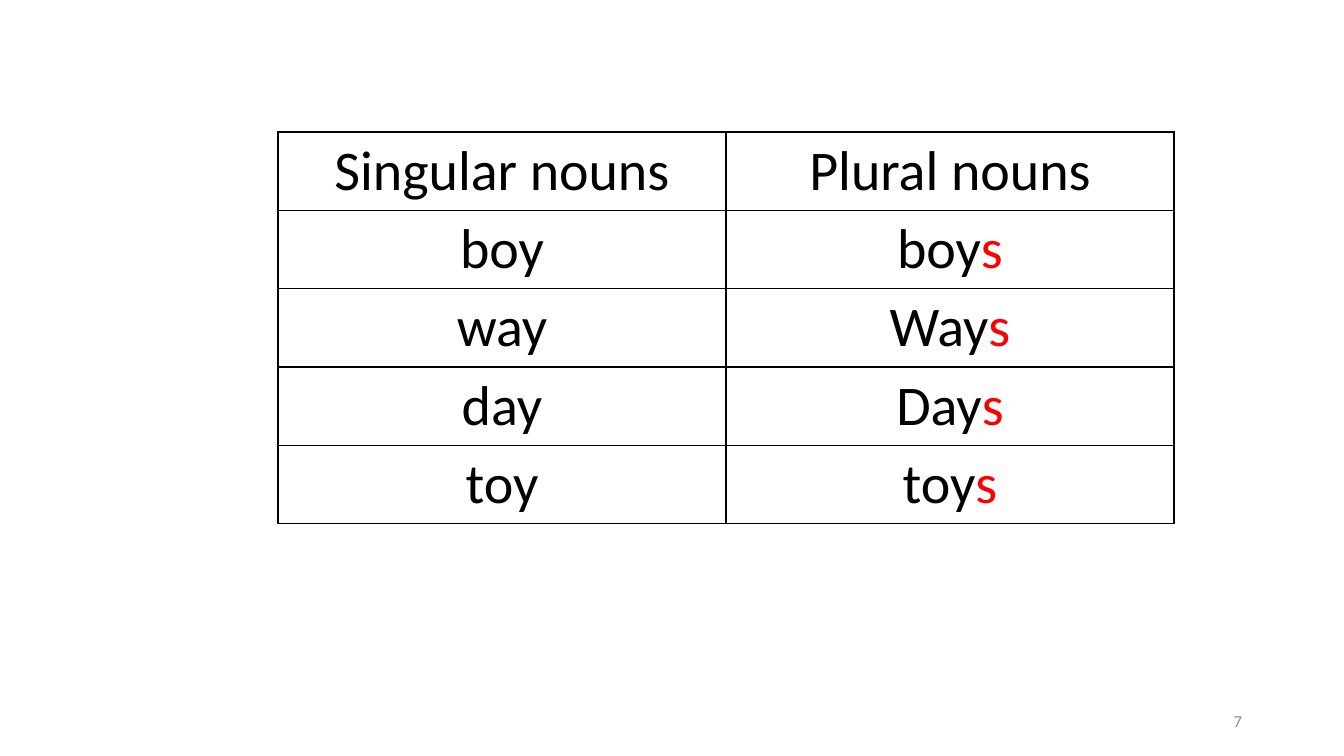
from pptx import Presentation, util as u
from pptx.dml.color import RGBColor
from pptx.enum import text
from pptx.oxml import parse_xml
from pptx.oxml.ns import nsdecls

PX = 914400 / 100.8
COLORS = {"ink": "000000", "ending": "FF0000", "number": "8C8C8C"}
FONT = "Calibri"
COL_W, ROW_H = 448, 78

# Each cell is a stem and a highlighted ending.
NOUNS = [
    [("Singular nouns", ""), ("Plural nouns", "")],
    [("boy", ""), ("boy", "s")],
    [("way", ""), ("Way", "s")],
    [("day", ""), ("Day", "s")],
    [("toy", ""), ("toy", "s")],
]


def px(n):
    return u.Emu(round(n * PX))


def add_run(p, words, size, color):
    r = p.add_run()
    r.text = words
    r.font.name = FONT
    r.font.size = u.Pt(size)
    r.font.color.rgb = RGBColor.from_string(COLORS[color])


def set_borders(cell):
    tc_pr = cell._tc.get_or_add_tcPr()
    for i, side in enumerate(("lnL", "lnR", "lnT", "lnB")):
        tc_pr.insert(i, parse_xml(
            f'<a:{side} {nsdecls("a")} w="{u.Pt(1)}"><a:solidFill>'
            f'<a:srgbClr val="{COLORS["ink"]}"/></a:solidFill></a:{side}>'))


def fill_cell(cell, stem, ending):
    cell.fill.background()
    set_borders(cell)
    p = cell.text_frame.paragraphs[0]
    p.alignment = text.PP_ALIGN.CENTER
    add_run(p, stem, 40, "ink")
    if ending:
        add_run(p, ending, 40, "ending")


def add_noun_table(s, x, y):
    n_rows, n_cols = len(NOUNS), len(NOUNS[0])
    table = s.shapes.add_table(n_rows, n_cols, px(x), px(y),
                               px(n_cols * COL_W), px(n_rows * ROW_H)).table
    table.first_row = table.horz_banding = False
    for col in table.columns:
        col.width = px(COL_W)
    for i, row in enumerate(NOUNS):
        table.rows[i].height = px(ROW_H)
        for j, (stem, ending) in enumerate(row):
            fill_cell(table.cell(i, j), stem, ending)


def add_page_number(s, number, x, y, w, h):
    tf = s.shapes.add_textbox(px(x), px(y), px(w), px(h)).text_frame
    tf.word_wrap = True
    tf.vertical_anchor = text.MSO_ANCHOR.MIDDLE
    p = tf.paragraphs[0]
    p.alignment = text.PP_ALIGN.RIGHT
    add_run(p, number, 12, "number")


def main():
    prs = Presentation()
    prs.slide_width, prs.slide_height = px(1344), px(756)
    s = prs.slides.add_slide(prs.slide_layouts[6])
    add_noun_table(s, 278, 132)
    add_page_number(s, "7", 950, 701, 302, 40)
    prs.save("out.pptx")


if __name__ == "__main__":
    main()
